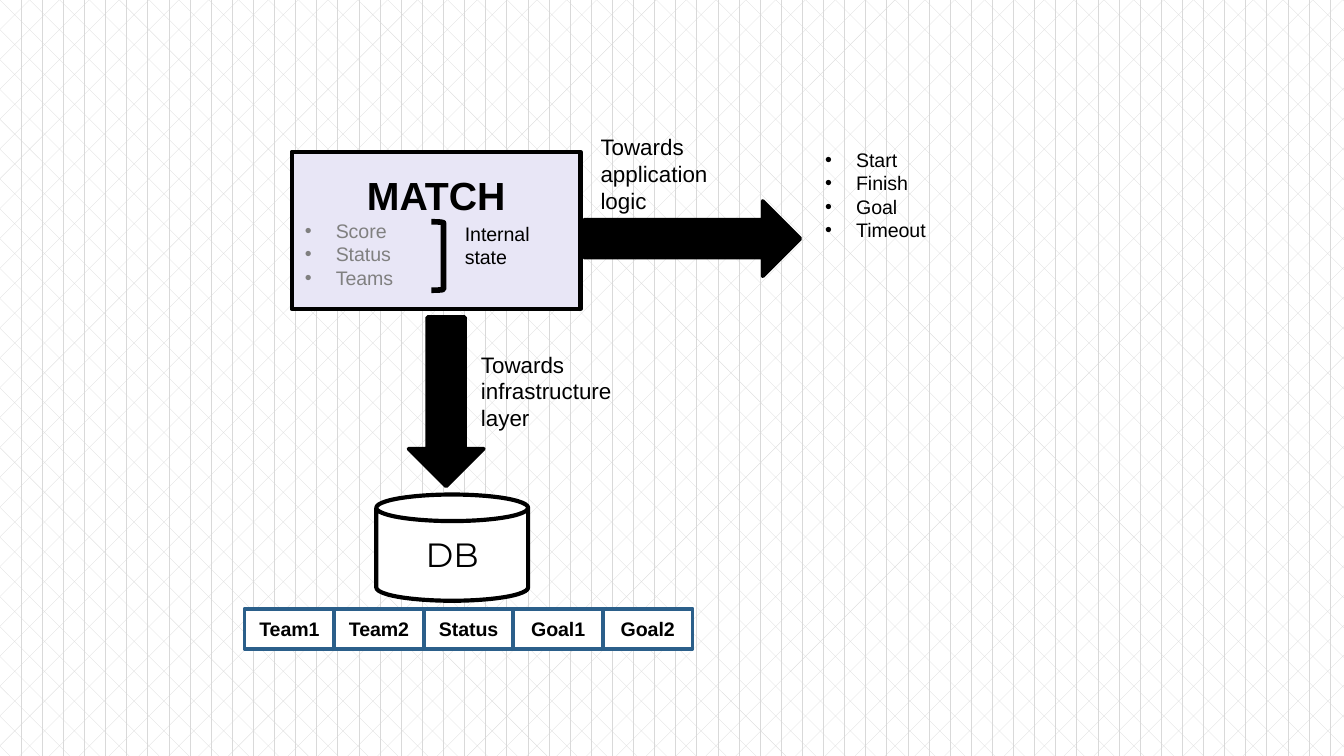
from lxml.etree import SubElement
from pptx import Presentation
from pptx.dml.color import RGBColor
from pptx.enum.dml import MSO_PATTERN
from pptx.enum.shapes import MSO_SHAPE as Shape
from pptx.enum.text import MSO_ANCHOR, MSO_AUTO_SIZE as AutoSize, PP_ALIGN as Align
from pptx.oxml.ns import qn
from pptx.util import Inches, Pt

BLACK, WHITE, GREY = "000000", "FFFFFF", "808080"
LAVENDER, BLUE, PATTERN_GREY = "E8E6F6", "2B5F8A", "D9D9D9"

LABEL = {"size": Pt(10.5), "name": "Arial", "bold": False}
CAPTION = {**LABEL, "size": Pt(12)}
HEADING = {**LABEL, "size": Pt(21), "bold": True}
CELL = {**LABEL, "bold": True}
DATABASE = {**LABEL, "size": Pt(18), "name": "Montserrat"}


def rgb(hex_color):
    return RGBColor.from_string(hex_color)


def inches(box):
    return [Inches(length) for length in box]


def set_background(slide):
    fill = slide.background.fill
    fill.patterned()
    fill.pattern = MSO_PATTERN.DIVOT
    fill.fore_color.rgb = rgb(PATTERN_GREY)
    fill.back_color.rgb = rgb(WHITE)


def add_bullet(paragraph):
    properties = paragraph._p.get_or_add_pPr()
    properties.set("marL", str(Inches(0.23)))
    properties.set("indent", str(Inches(-0.23)))
    SubElement(properties, qn("a:buFont")).set("typeface", "Arial")
    SubElement(properties, qn("a:buChar")).set("char", "•")


def write_lines(frame, lines, style, color=BLACK, align=Align.LEFT, bullets=False):
    """Fill the empty first paragraph, then append one paragraph per line."""
    for line in lines:
        last = frame.paragraphs[-1]
        paragraph = frame.add_paragraph() if last.runs else last
        paragraph.alignment = align
        paragraph.space_before = Pt(0)
        run = paragraph.add_run()
        run.text = line
        for attribute, value in style.items():
            setattr(run.font, attribute, value)
        run.font.color.rgb = rgb(color)
        if bullets:
            add_bullet(paragraph)


def add_block(shapes, kind, box, fill=None, line=BLACK, width=2.25):
    block = shapes.add_shape(kind, *inches(box))
    block.shadow.inherit = False
    if fill:
        block.fill.solid()
        block.fill.fore_color.rgb = rgb(fill)
    else:
        block.fill.background()
    block.line.color.rgb = rgb(line)
    block.line.width = Pt(width)
    block.text_frame.vertical_anchor = MSO_ANCHOR.MIDDLE
    return block


def add_text(shapes, box, lines, style, wrap=True):
    frame = shapes.add_textbox(*inches(box)).text_frame
    frame.word_wrap = wrap
    frame.auto_size = AutoSize.SHAPE_TO_FIT_TEXT
    write_lines(frame, lines, style)


def add_match(shapes):
    match = add_block(shapes, Shape.RECTANGLE, (2.17, 1.13, 2.15, 1.17), LAVENDER)
    write_lines(match.text_frame, ["MATCH"], HEADING, align=Align.CENTER)
    write_lines(match.text_frame, ["Score", "Status", "Teams"], LABEL, GREY, bullets=True)
    add_block(shapes, Shape.RIGHT_BRACKET, (3.21, 1.65, 0.09, 0.51), width=3)
    add_text(shapes, (3.36, 1.6, 0.69, 0.45), ["Internal", "state"], LABEL, wrap=False)


def add_events(slide):
    title = slide.shapes.title._element
    title.getparent().remove(title)
    events = slide.placeholders[1]
    events.left, events.top, events.width, events.height = inches((6.04, 1.05, 0.97, 0.81))
    frame = events.text_frame
    frame.word_wrap = False
    frame.auto_size = AutoSize.SHAPE_TO_FIT_TEXT
    write_lines(frame, ["Start", "Finish", "Goal", "Timeout"], LABEL, bullets=True)


def add_record(shapes, fields, left=1.82, top=4.53, pitch=2 / 3, height=0.3):
    record = shapes.add_group_shape()
    for column, field in enumerate(fields):
        box = (left + column * pitch, top, pitch, height)
        cell = add_block(record.shapes, Shape.RECTANGLE, box, WHITE, BLUE, 2)
        cell.text_frame.margin_left = cell.text_frame.margin_right = 0
        write_lines(cell.text_frame, [field], CELL, align=Align.CENTER)


def add_database(shapes):
    database = add_block(shapes, Shape.CAN, (2.8, 3.68, 1.13, 0.79), WHITE)
    write_lines(database.text_frame, ["DB"], DATABASE, align=Align.CENTER)


def add_arrow(shapes, box, rotation=0):
    arrow = add_block(shapes, Shape.DOWN_ARROW, box, BLACK, width=2)
    arrow.rotation = rotation


def main():
    deck = Presentation()
    deck.slide_width = Inches(10)
    deck.slide_height = deck.slide_width * 9 // 16
    slide = deck.slides.add_slide(deck.slide_layouts[1])
    shapes = slide.shapes

    set_background(slide)
    add_events(slide)
    add_match(shapes)
    add_record(shapes, ["Team1", "Team2", "Status", "Goal1", "Goal2"])
    add_database(shapes)
    add_arrow(shapes, (3.04, 2.36, 0.56, 1.26))
    add_arrow(shapes, (4.87, 0.97, 0.56, 1.61), rotation=270)
    add_text(shapes, (4.37, 0.94, 1.27, 0.71), ["Towards application logic"], CAPTION)
    add_text(shapes, (3.48, 2.56, 1.55, 0.71), ["Towards infrastructure layer"], CAPTION)
    deck.save("out.pptx")


if __name__ == "__main__":
    main()
